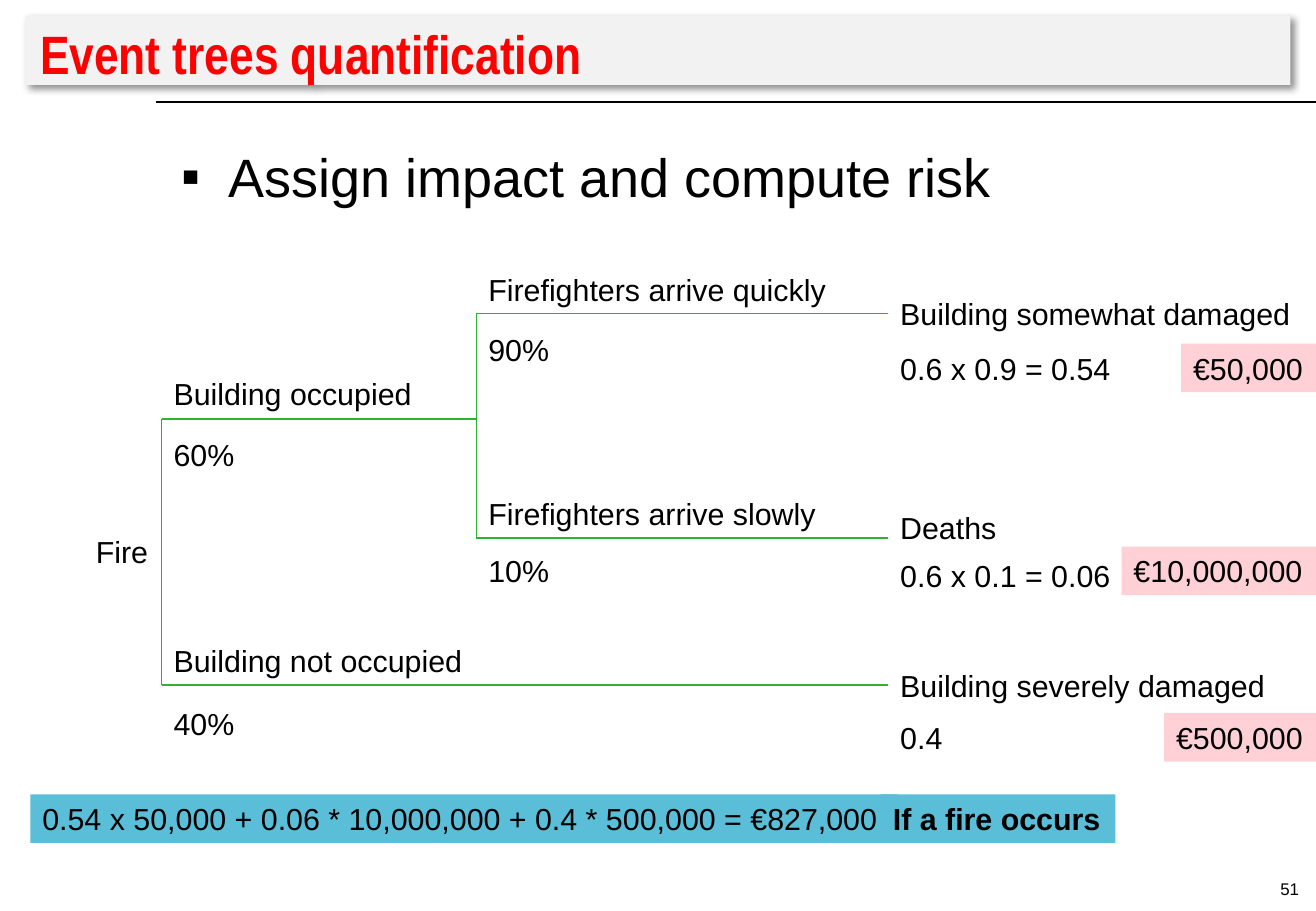
from lxml import etree
from pptx import Presentation
from pptx.dml.color import RGBColor
from pptx.enum.shapes import MSO_CONNECTOR, MSO_SHAPE
from pptx.enum.text import MSO_ANCHOR, MSO_AUTO_SIZE, PP_ALIGN
from pptx.oxml import parse_xml
from pptx.oxml.ns import nsdecls, qn
from pptx.util import Inches, Pt

RECT = MSO_SHAPE.RECTANGLE
STRAIGHT = MSO_CONNECTOR.STRAIGHT
LEFT, RIGHT = PP_ALIGN.LEFT, PP_ALIGN.RIGHT
TOP, BOTTOM = MSO_ANCHOR.TOP, MSO_ANCHOR.BOTTOM
GROW = MSO_AUTO_SIZE.SHAPE_TO_FIT_TEXT

COLORS = {"black": "000000", "red": "FF0000", "bar": "F2F2F2",
          "branch": "30B12F", "cost": "FFD1D6", "total": "5ABED8"}

prs = Presentation()
prs.slide_width, prs.slide_height = Inches(10.83), Inches(7.5)
slide = prs.slides.add_slide(prs.slide_layouts[6])
shapes = slide.shapes


def add_text(text, x, y, w, h=0.4, size=18, color="black", font="Arial",
             bold=False, fill=None):
    """Add one line of text, on a filled rectangle if a fill is named."""
    place = [Inches(v) for v in (x, y, w, h)]
    if fill:
        box = shapes.add_shape(RECT, *place)
        box.shadow.inherit = False
        box.fill.solid()
        box.fill.fore_color.rgb = RGBColor.from_string(COLORS[fill])
        box.line.fill.background()
    else:
        box = shapes.add_textbox(*place)
    frame = box.text_frame
    frame.word_wrap = False
    frame.vertical_anchor = TOP
    para = frame.paragraphs[0]
    para.alignment = LEFT
    run = para.add_run()
    run.text = text
    run.font.name, run.font.size, run.font.bold = font, Pt(size), bold
    run.font.color.rgb = RGBColor.from_string(COLORS[color])
    return box


def add_line(x1, y1, x2, y2, color="branch", width=0.75):
    """Add a straight line without a shadow."""
    line = shapes.add_connector(STRAIGHT, *[Inches(v) for v in (x1, y1, x2, y2)])
    line.line.color.rgb = RGBColor.from_string(COLORS[color])
    line.line.width = Pt(width)
    etree.SubElement(line._element.spPr, qn("a:effectLst"))
    return line


# Title bar with its shadow and rule
add_line(1.28, 0.84, 10.83, 0.84, "black", 1)
title = add_text("Event trees quantification", 0.21, 0.13, 10.41, 0.57, 32,
                 "red", "Arial Narrow", True, "bar")
frame = title.text_frame
frame.word_wrap = True
frame.vertical_anchor = BOTTOM
frame.margin_left, frame.margin_bottom = Inches(0.12), 0
effects = title._element.spPr.find(qn("a:effectLst"))
effects.append(parse_xml(
    f'<a:outerShdw {nsdecls("a")} blurRad="50800" dist="38100" dir="2700000" '
    'algn="tl" rotWithShape="0"><a:srgbClr val="000000"><a:alpha val="43000"/>'
    '</a:srgbClr></a:outerShdw>'))

# Bullet
body = add_text("Assign impact and compute risk", 1.37, 1.13, 9.24, 0.7, 32)
body.text_frame.word_wrap = True
body.text_frame.margin_left = Inches(0.12)
props = body.text_frame.paragraphs[0]._p.get_or_add_pPr()
props.set("marL", str(Inches(0.39)))
props.set("indent", str(-Inches(0.39)))
etree.SubElement(props, qn("a:buFont"), typeface="Arial")
etree.SubElement(props, qn("a:buChar"), char="▪")

# Slide number
number = add_text("51", 9.94, 7.14, 0.75, 0.36, 10)
number.text_frame.word_wrap = True
number.text_frame.margin_right = 0
para = number.text_frame.paragraphs[0]
para.alignment, para.line_spacing = RIGHT, Pt(15)

# Tree columns and branch heights
ROOT, FORK, END = 1.33, 3.92, 7.31
BUSY, EMPTY, QUICK, SLOW = 3.45, 5.64, 2.58, 4.43

# Events, chances and outcomes
labels = {}
for text, x, y, w in [
    ("Fire", 0.69, 4.34, 0.64),
    ("Building occupied", ROOT, 3.04, 2.18),
    ("60%", ROOT, 3.54, 0.71),
    ("Building not occupied", ROOT, 5.24, 2.6),
    ("40%", ROOT, 5.76, 0.71),
    ("Firefighters arrive quickly", FORK, 2.18, 3.01),
    ("90%", FORK, 2.68, 0.71),
    ("Firefighters arrive slowly", FORK, 4.03, 2.92),
    ("10%", FORK, 4.5, 0.71),
    ("Building somewhat damaged", END, 2.38, 3.44),
    ("0.6 x 0.9 = 0.54", END, 2.83, 1.95),
    ("Deaths", END, 4.14, 1),
    ("0.6 x 0.1 = 0.06", END, 4.54, 1.95),
    ("Building severely damaged", END, 5.44, 3.23),
    ("0.4", END, 5.87, 0.55),
]:
    labels[text] = add_text(text, x, y, w)
    labels[text].text_frame.auto_size = GROW

# Branches
add_line(ROOT, EMPTY, ROOT, BUSY)
add_line(FORK, BUSY, ROOT, BUSY)
add_line(FORK, SLOW, FORK, QUICK)
add_line(END, SLOW, FORK, SLOW)
quick = add_line(END, QUICK, FORK, QUICK)
quick.begin_connect(labels["Building somewhat damaged"], 1)
empty = add_line(END, EMPTY, ROOT, EMPTY)
empty.begin_connect(labels["Building severely damaged"], 1)

# Costs, flush with the right edge
for text, y, w in [("€50,000", 2.83, 1.11), ("€10,000,000", 4.5, 1.6),
                   ("€500,000", 5.87, 1.25)]:
    cost = add_text(text, 10.83 - w, y, w, fill="cost")
    cost.text_frame.auto_size = GROW

# Total risk
for text, x, w, bold in [
    ("0.54 x 50,000 + 0.06 * 10,000,000 + 0.4 * 500,000 = €827,000",
     0.25, 7.14, False),
    ("If a fire occurs", 7.25, 1.93, True),
]:
    total = add_text(text, x, 6.54, w, bold=bold, fill="total")
    total.text_frame.auto_size = GROW

prs.save("out.pptx")
